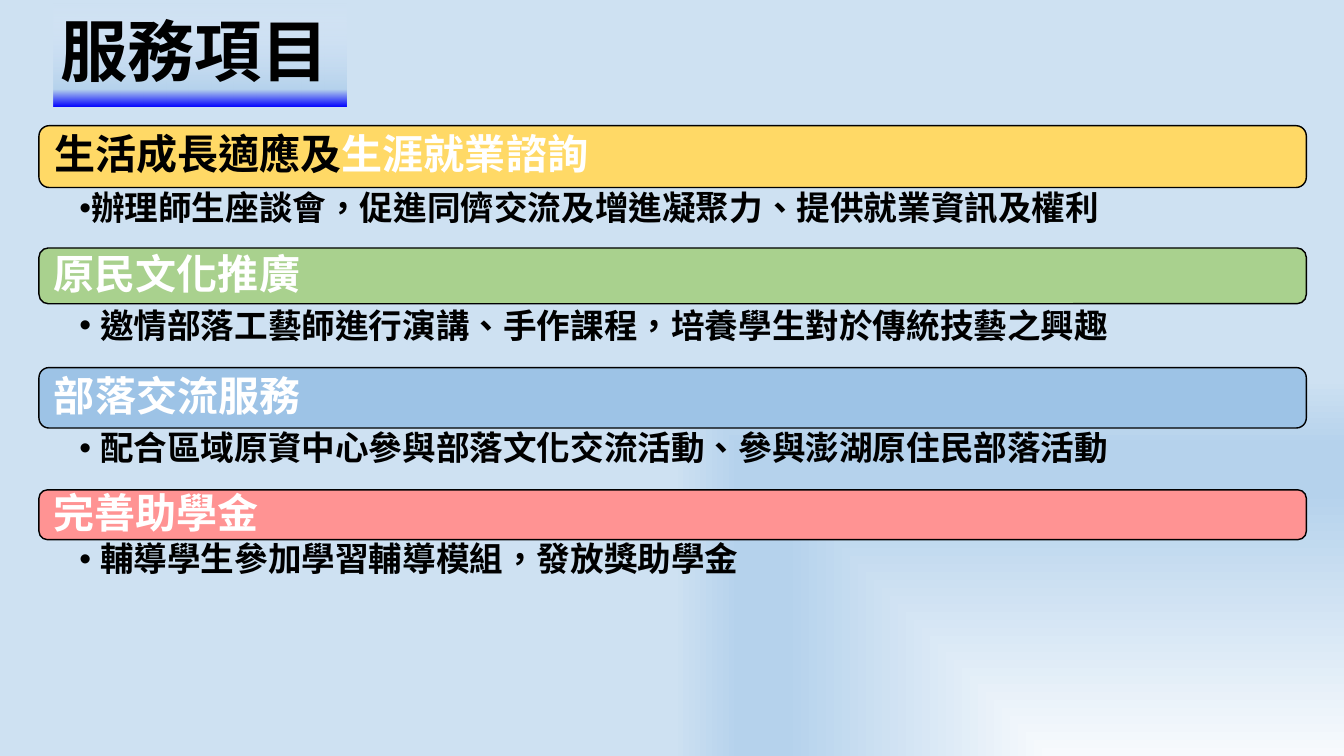
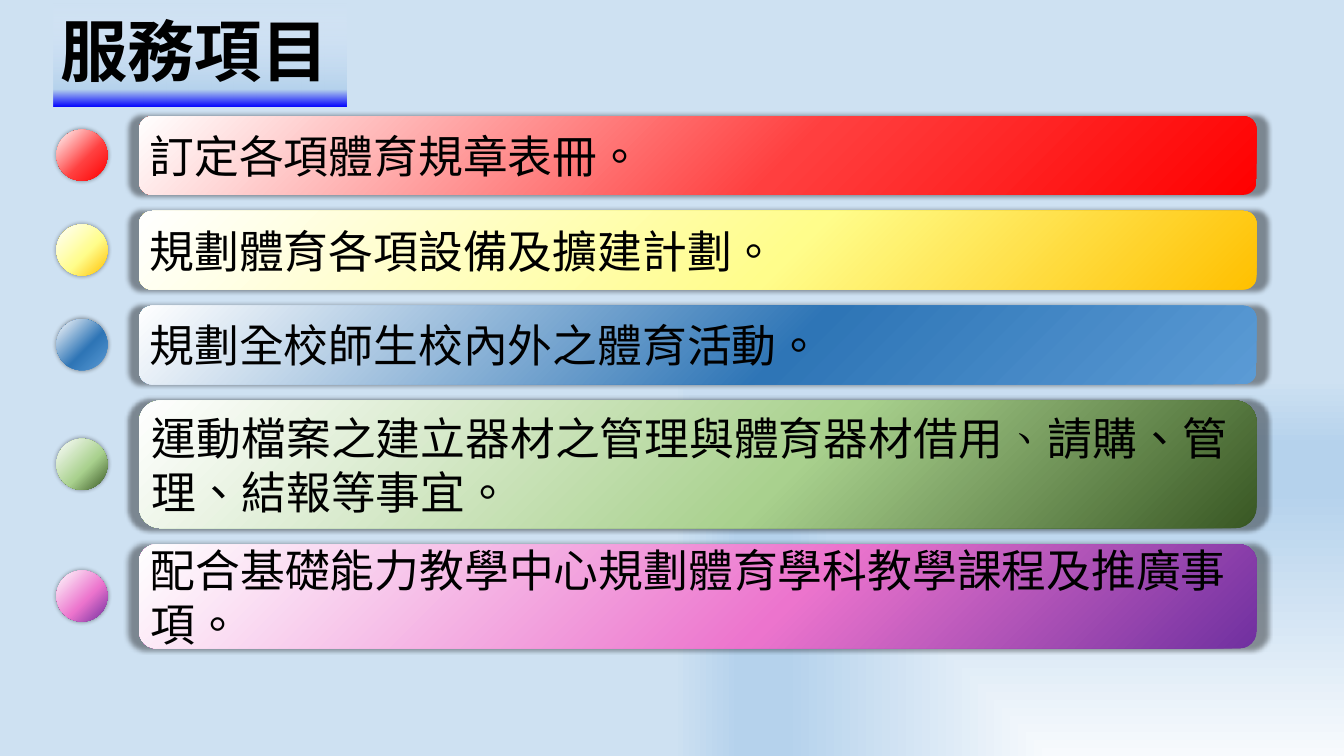
from pptx import Presentation
from pptx.dml.color import RGBColor
from pptx.enum.shapes import MSO_SHAPE
from pptx.enum.text import MSO_ANCHOR, PP_ALIGN
from pptx.oxml import parse_xml
from pptx.oxml.ns import nsdecls, qn
from pptx.util import Pt
from lxml.etree import SubElement

# Content
TITLE = "服務項目"
# Heading runs (text, colour), bar colour, bar top, bar height, gap to detail, hanging indent, detail
SERVICES = [
    ([("生活成長適應及", "black"), ("生涯就業諮詢", "white")], "yellow", 187, 92, 1, 0,
     "辦理師生座談會，促進同儕交流及增進凝聚力、提供就業資訊及權利"),
    ([("原民文化推廣", "white")], "green", 369, 83, 3, 31,
     "邀情部落工藝師進行演講、手作課程，培養學生對於傳統技藝之興趣"),
    ([("部落交流服務", "white")], "blue", 547, 90, 0, 31,
     "配合區域原資中心參與部落文化交流活動、參與澎湖原住民部落活動"),
    ([("完善助學金", "white")], "pink", 729, 74, 0, 31,
     "輔導學生參加學習輔導模組，發放獎助學金"),
]
SANS, SERIF = "Noto Sans CJK SC", "Times New Roman"
# Row height, gradient end colours, paragraphs of (text, font) runs
DUTIES = [
    (117, ("FF0000", "FF3F3F"), [[("訂定各項體育規章表冊。", SANS)]]),
    (117, ("FFC000", "FFFD8B"), [[("規劃體育各項設備及擴建計劃。", SANS)]]),
    (117, ("5B9BD5", "2E75B6"), [[("規劃全校師生校內外之體育活動。", SANS)]]),
    (190, ("385723", "A9D18E"), [[("運動檔案之建立器材之管理與體育器材借用", SANS), ("、", SERIF),
                                  ("請購、管理、結報等事宜。", SANS)]]),
    (155, ("7030A0", "EC74CD"), [[("配合基礎能力教學中心規劃體育學科教學課程及推廣事", SANS)],
                                 [("項。", SANS)]]),
]

# Shared style
PX = 9144  # 100 px to the inch
COLORS = {"black": "000000", "white": "FFFFFF", "yellow": "FFD966", "green": "A9D18E",
          "blue": "9DC3E6", "pink": "FF9393"}
BACKGROUND = [(0, "F7FAFD"), (70, "B5D2EC"), (82, "B5D2EC"), (100, "CEE1F2")]
TITLE_FADE = [(0, "0000FF"), (17, "B5D2EC"), (100, "E1EBFB", 0)]
CORNER_PATH = '<a:path path="rect"><a:fillToRect l="100000" t="100000"/></a:path>'
BAR_LEFT, BAR_WIDTH, DETAIL_HEIGHT = 58, 1886, 92
ROW_LEFT, ROW_TOP, ROW_WIDTH, ROW_GAP = 207, 173, 1663, 24
BALL_LEFT, BALL = 84, 76


def rgb(name):
    return RGBColor.from_string(COLORS[name])


def set_gradient(fill, owner, stops, direction):
    fill.gradient()
    old = owner.element.find(".//" + qn("a:gradFill"))
    gs = ""
    for pos, color, *alpha in stops:
        opacity = "".join(f'<a:alpha val="{a * 1000}"/>' for a in alpha)
        gs += f'<a:gs pos="{pos * 1000}"><a:srgbClr val="{color}">{opacity}</a:srgbClr></a:gs>'
    new = parse_xml(f'<a:gradFill {nsdecls("a")} rotWithShape="1"><a:gsLst>{gs}</a:gsLst>'
                    f'{direction}</a:gradFill>')
    old.getparent().replace(old, new)


def linear(degrees):
    return f'<a:lin ang="{degrees * 60000}" scaled="0"/>'


def add_shape(s, kind, *box):
    sp = s.shapes.add_shape(kind, *(v * PX for v in box))
    sp.shadow.inherit = False
    sp.line.fill.background()
    return sp


def add_shadow(sp):
    effects = sp.element.spPr.find(qn("a:effectLst"))
    effects.append(parse_xml(
        f'<a:outerShdw {nsdecls("a")} blurRad="63500" sx="102000" sy="102000" algn="ctr" '
        'rotWithShape="0"><a:srgbClr val="000000"><a:alpha val="40000"/></a:srgbClr></a:outerShdw>'))


def set_frame(sp, anchor=MSO_ANCHOR.MIDDLE, insets=(10, 5, 10, 5)):
    tf = sp.text_frame
    tf.word_wrap = True
    tf.vertical_anchor = anchor
    tf.margin_left, tf.margin_top, tf.margin_right, tf.margin_bottom = (v * PX for v in insets)
    return tf


def add_run(p, text, size, color="black", bold=False, font=SANS):
    r = p.add_run()
    r.text = text
    r.font.size, r.font.bold, r.font.name = Pt(size), bold, font
    r.font.color.rgb = rgb(color)
    rPr = r.font._element
    rPr.set("lang", "zh-TW")
    SubElement(rPr, qn("a:ea")).set("typeface", font)


def add_title(s):
    sp = add_shape(s, MSO_SHAPE.RECTANGLE, 80, 5, 436, 154)
    set_gradient(sp.fill, sp, TITLE_FADE, linear(270))
    p = set_frame(sp).paragraphs[0]
    p.alignment, p.line_spacing = PP_ALIGN.LEFT, 0.9
    add_run(p, TITLE, 72, bold=True)


def add_service(s, heading, color, top, height, gap, indent, detail):
    # Heading bar
    bar = add_shape(s, MSO_SHAPE.ROUNDED_RECTANGLE, BAR_LEFT, top, BAR_WIDTH, height)
    bar.fill.solid()
    bar.fill.fore_color.rgb = rgb(color)
    bar.line.color.rgb = rgb("black")
    bar.line.width = Pt(1.5)
    p = set_frame(bar, insets=(18, 18, 18, 18)).paragraphs[0]
    p.alignment, p.line_spacing = PP_ALIGN.LEFT, 0.9
    for text, text_color in heading:
        add_run(p, text, 44, text_color, bold=True)

    # Bulleted detail
    box = (BAR_LEFT, top + height + gap, BAR_WIDTH, DETAIL_HEIGHT)
    tb = s.shapes.add_textbox(*(v * PX for v in box))
    p = set_frame(tb, MSO_ANCHOR.TOP, (60, 5, 28, 5)).paragraphs[0]
    p.level, p.line_spacing = 1, 0.9
    pPr = p._p.get_or_add_pPr()
    pPr.set("marL", str(indent * PX))
    pPr.set("indent", str(-31 * PX))
    SubElement(pPr, qn("a:buFont")).set("typeface", "Arial")
    SubElement(pPr, qn("a:buChar")).set("char", "•")
    add_run(p, detail, 36, bold=True)


def add_duty(s, top, height, colors, paragraphs):
    stops = [(0, colors[0]), (42, colors[1]), (100, COLORS["white"])]
    row = add_shape(s, MSO_SHAPE.ROUNDED_RECTANGLE, ROW_LEFT, top, ROW_WIDTH, height)
    ball = add_shape(s, MSO_SHAPE.OVAL, BALL_LEFT, top + (height - BALL) // 2, BALL, BALL)
    for sp in (row, ball):
        set_gradient(sp.fill, sp, stops, linear(225))
        add_shadow(sp)
    tf = set_frame(row)
    for i, runs in enumerate(paragraphs):
        p = tf.add_paragraph() if i else tf.paragraphs[0]
        p.alignment = PP_ALIGN.LEFT
        for text, font in runs:
            add_run(p, text, 48, font=font)


def main():
    prs = Presentation()
    prs.slide_width, prs.slide_height = 2000 * PX, 1125 * PX
    master = prs.slide_master
    set_gradient(master.background.fill, master, BACKGROUND, CORNER_PATH)
    blank = prs.slide_layouts[6]

    # Services
    s = prs.slides.add_slide(blank)
    for service in SERVICES:
        add_service(s, *service)
    add_title(s)

    # Physical education duties
    s = prs.slides.add_slide(blank)
    top = ROW_TOP
    for height, colors, paragraphs in DUTIES:
        add_duty(s, top, height, colors, paragraphs)
        top += height + ROW_GAP
    add_title(s)

    prs.save("out.pptx")


if __name__ == "__main__":
    main()
